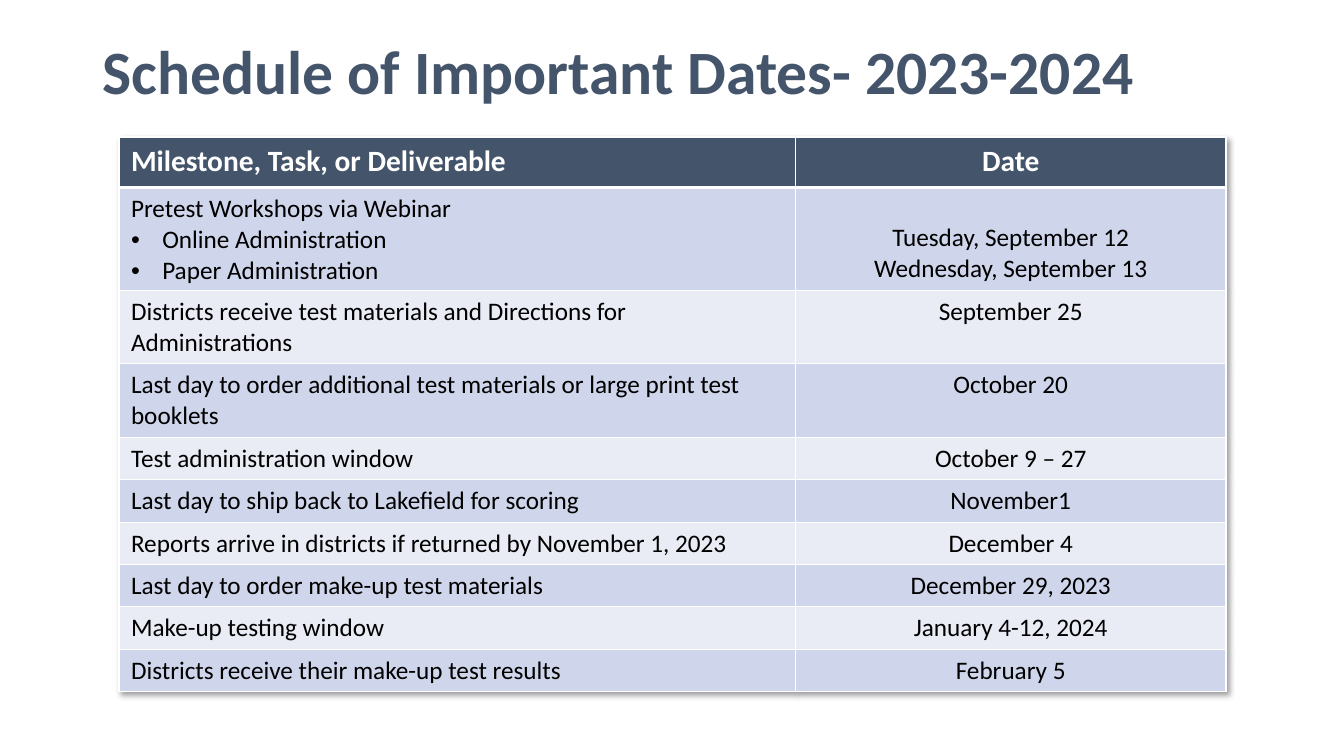
from dataclasses import dataclass

from lxml.etree import SubElement
from pptx import Presentation
from pptx.dml.color import RGBColor
from pptx.enum.text import MSO_ANCHOR as Anchor, PP_ALIGN as Align
from pptx.oxml import parse_xml
from pptx.oxml.ns import nsdecls, qn
from pptx.util import Inches, Pt


@dataclass(frozen=True)
class Theme:
    font: str = "Calibri"
    navy: str = "44546A"
    white: str = "FFFFFF"
    black: str = "000000"
    bands: tuple[str, str] = ("CFD5EA", "E9EBF5")
    title_size: int = 44
    header_size: int = 21
    body_size: int = 18
    thin_border: int = 1
    thick_border: int = 3


@dataclass(frozen=True)
class Milestone:
    task: str
    dates: tuple[str, ...]
    bullets: tuple[str, ...] = ()
    height: float = 0.42


THEME = Theme()
HEADER_HEIGHT = 0.5
TWO_LINES = 0.73
COLUMN_WIDTHS = (6.71, 4.27)
MILESTONES = (
    Milestone("Pretest Workshops via Webinar",
              ("Tuesday, September 12", "Wednesday, September 13"),
              ("Online Administration", "Paper Administration"), 1.02),
    Milestone("Districts receive test materials and Directions for Administrations",
              ("September 25",), height=TWO_LINES),
    Milestone("Last day to order additional test materials or large print test booklets",
              ("October 20",), height=TWO_LINES),
    Milestone("Test administration window", ("October 9 – 27",)),
    Milestone("Last day to ship back to Lakefield for scoring", ("November1",)),
    Milestone("Reports arrive in districts if returned by November 1, 2023", ("December 4",)),
    Milestone("Last day to order make-up test materials", ("December 29, 2023",)),
    Milestone("Make-up testing window", ("January 4-12, 2024",)),
    Milestone("Districts receive their make-up test results", ("February 5",)),
)


def write(frame, *lines: str, size: int = THEME.body_size, color: str = THEME.black,
          bold: bool = False, align=Align.LEFT, spacing: float = 1.0,
          bulleted_from: int | None = None) -> None:
    """Write one paragraph per line, with bullets from the given line index on."""
    for index, line in enumerate(lines):
        paragraph = frame.paragraphs[0] if index == 0 else frame.add_paragraph()
        paragraph.alignment = align
        paragraph.line_spacing = spacing
        if bulleted_from is not None and index >= bulleted_from:
            properties = paragraph._p.get_or_add_pPr()
            properties.set("marL", str(Inches(0.31)))
            properties.set("indent", str(-Inches(0.31)))
            SubElement(properties, qn("a:buFont"), typeface="Arial")
            SubElement(properties, qn("a:buChar"), char="•")
        run = paragraph.add_run()
        run.text = line
        run.font.name = THEME.font
        run.font.size = Pt(size)
        run.font.bold = bold
        run.font.color.rgb = RGBColor.from_string(color)


def style_cell(cell, fill: str, top: int = THEME.thin_border,
               bottom: int = THEME.thin_border) -> None:
    properties = cell._tc.get_or_add_tcPr()
    widths = {"L": THEME.thin_border, "R": THEME.thin_border, "T": top, "B": bottom}
    for side, width in widths.items():
        border = SubElement(properties, qn(f"a:ln{side}"), w=str(Pt(width)))
        paint = SubElement(border, qn("a:solidFill"))
        SubElement(paint, qn("a:srgbClr"), val=THEME.white)
    cell.fill.solid()
    cell.fill.fore_color.rgb = RGBColor.from_string(fill)
    cell.margin_left = cell.margin_right = Inches(0.12)
    cell.margin_top = cell.margin_bottom = Inches(0.06)


def add_table_shadow(table) -> None:
    table._tbl.tblPr.insert(0, parse_xml(
        f'<a:effectLst {nsdecls("a")}>'
        f'<a:outerShdw blurRad="{Pt(4)}" dist="{Pt(3)}" dir="2700000" algn="tl" rotWithShape="0">'
        f'<a:srgbClr val="{THEME.black}"><a:alpha val="40000"/></a:srgbClr>'
        '</a:outerShdw></a:effectLst>'))


def add_title(slide) -> None:
    title = slide.shapes.add_textbox(Inches(0.92), Inches(0.3), Inches(11.5), Inches(0.88))
    title.text_frame.word_wrap = True
    title.text_frame.vertical_anchor = Anchor.MIDDLE
    write(title.text_frame, "Schedule of Important Dates- 2023-2024",
          size=THEME.title_size, color=THEME.navy, bold=True, spacing=0.9)


def add_schedule(slide) -> None:
    heights = [HEADER_HEIGHT, *(milestone.height for milestone in MILESTONES)]
    schedule = slide.shapes.add_table(
        len(heights), len(COLUMN_WIDTHS), Inches(1.18), Inches(1.36),
        Inches(sum(COLUMN_WIDTHS)), Inches(sum(heights))).table
    for column, width in zip(schedule.columns, COLUMN_WIDTHS):
        column.width = Inches(width)
    for row, height in zip(schedule.rows, heights):
        row.height = Inches(height)
    add_table_shadow(schedule)

    headings = (("Milestone, Task, or Deliverable", Align.LEFT), ("Date", Align.CENTER))
    for column, (heading, align) in enumerate(headings):
        cell = schedule.cell(0, column)
        style_cell(cell, THEME.navy, bottom=THEME.thick_border)
        write(cell.text_frame, heading, size=THEME.header_size,
              color=THEME.white, bold=True, align=align)

    for row, milestone in enumerate(MILESTONES, start=1):
        task, date = schedule.cell(row, 0), schedule.cell(row, 1)
        for cell in (task, date):
            style_cell(cell, THEME.bands[(row - 1) % 2],
                       top=THEME.thick_border if row == 1 else THEME.thin_border)
        write(task.text_frame, milestone.task, *milestone.bullets, bulleted_from=1)
        write(date.text_frame, *milestone.dates, align=Align.CENTER)
        if milestone.bullets:
            date.vertical_anchor = Anchor.BOTTOM


def main() -> None:
    deck = Presentation()
    deck.slide_width, deck.slide_height = Inches(13.33), Inches(7.5)
    slide = deck.slides.add_slide(deck.slide_layouts[6])
    add_title(slide)
    add_schedule(slide)
    deck.save("out.pptx")


if __name__ == "__main__":
    main()
